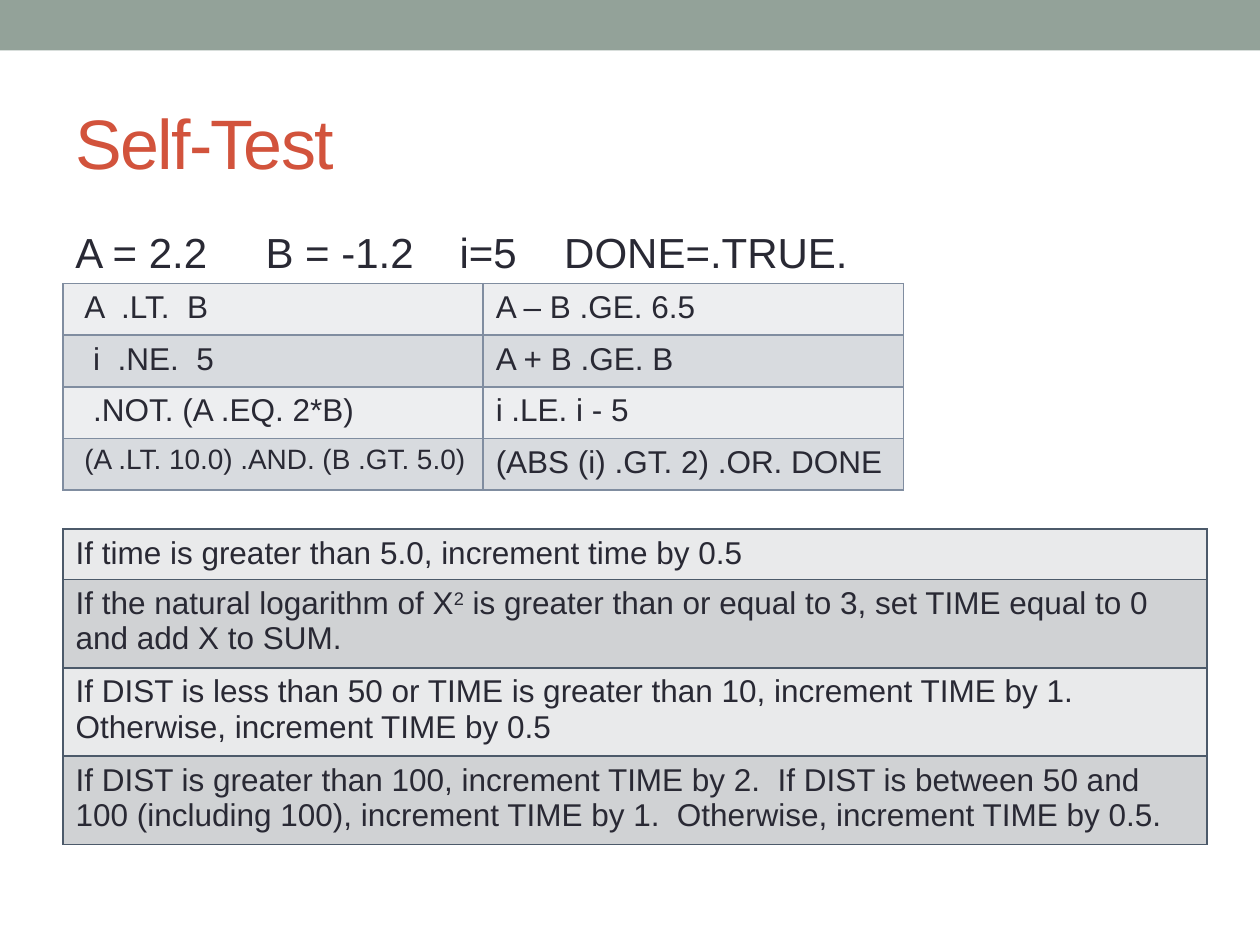
import pptx
import pptx.util
import pptx.dml.color
import pptx.enum.shapes
import pptx.enum.text
import pptx.oxml
import pptx.oxml.ns
from pptx.util import Inches, Pt

HUES = {
    "bar": "93A299", "title": "D2533C", "text": "292934",
    "test_line": "808DA0", "test_odd": "EDEEF0", "test_even": "D8DBDF",
    "task_line": "4C5A6A", "task_odd": "E9EAEB", "task_even": "D0D2D4",
}

# Each cell: text, size, left margin
TESTS = [
    [("A  .LT.  B", 18, 0.17), ("A – B .GE. 6.5", 18, 0.1)],
    [("i  .NE.  5", 18, 0.24), ("A + B .GE. B", 18, 0.1)],
    [(".NOT. (A .EQ. 2*B)", 18, 0.24), ("i .LE. i - 5", 18, 0.1)],
    [("(A .LT. 10.0) .AND. (B .GT. 5.0)", 16, 0.17),
     ("(ABS (i) .GT. 2) .OR. DONE", 18, 0.1)],
]
TASKS = [
    "If time is greater than 5.0, increment time by 0.5",
    "If the natural logarithm of X^2^ is greater than or equal to 3, "
    "set TIME equal to 0 and add X to SUM.",
    "If DIST is less than 50 or TIME is greater than 10, increment TIME by 1.  "
    "Otherwise, increment TIME by 0.5",
    "If DIST is greater than 100, increment TIME by 2.  If DIST is between 50 "
    "and 100 (including 100), increment TIME by 1.  Otherwise, increment TIME by 0.5.",
]


def tint(name):
    return pptx.dml.color.RGBColor.from_string(HUES[name])


def style(run, size, hue="text"):
    run.font.name = "Arial"
    run.font.size = Pt(size)
    run.font.color.rgb = tint(hue)


def add_bar(slide, x, y, w, h):
    bar = slide.shapes.add_shape(
        pptx.enum.shapes.MSO_SHAPE.RECTANGLE, x, y, w, h)
    bar.shadow.inherit = False
    bar.fill.solid()
    bar.fill.fore_color.rgb = tint("bar")
    bar.line.fill.background()


def set_title(slide, x, y, w, h):
    title = slide.shapes.title
    title.left, title.top, title.width, title.height = x, y, w, h
    frame = title.text_frame
    frame.text = "Self-Test"
    frame.vertical_anchor = pptx.enum.text.MSO_ANCHOR.MIDDLE
    para = frame.paragraphs[0]
    para.alignment = pptx.enum.text.PP_ALIGN.LEFT
    run = para.runs[0]
    style(run, 40, "title")
    run._r.get_or_add_rPr().set("spc", "-100")


def add_givens(slide, x, y, w, h):
    """Place the variable values, spaced by tab stops."""
    frame = slide.shapes.add_textbox(x, y, w, h).text_frame
    frame.word_wrap = True
    para = frame.paragraphs[0]
    para.text = "A = 2.2\tB = -1.2\ti=5\tDONE=.TRUE."
    para.space_before = Pt(2.4)
    stops = "".join(f'<a:tab pos="{Inches(pos)}" algn="l"/>'
                    for pos in (1.51, 3.05, 3.88))
    para._p.get_or_add_pPr().append(pptx.oxml.parse_xml(
        f'<a:tabLst {pptx.oxml.ns.nsdecls("a")}>{stops}</a:tabLst>'))
    for run in para.runs:
        style(run, 24)


def fill_cell(cell, text, size, left, kind, row):
    """Write a cell; text between carets is raised."""
    para = cell.text_frame.paragraphs[0]
    for i, part in enumerate(text.split("^")):
        run = para.add_run()
        run.text = part
        style(run, size)
        if i % 2:
            run._r.get_or_add_rPr().set("baseline", "30000")
    cell.margin_left = Inches(left)
    props = cell._tc.get_or_add_tcPr()
    for side in "LRTB":
        props.append(pptx.oxml.parse_xml(
            f'<a:ln{side} {pptx.oxml.ns.nsdecls("a")} w="{Pt(1)}"><a:solidFill>'
            f'<a:srgbClr val="{HUES[kind + "_line"]}"/></a:solidFill></a:ln{side}>'))
    cell.fill.solid()
    cell.fill.fore_color.rgb = tint(kind + ("_even" if row % 2 else "_odd"))


def add_grid(slide, x, y, w, rows, highs, kind):
    cols = len(rows[0])
    table = slide.shapes.add_table(
        len(rows), cols, x, y, w, Inches(sum(highs))).table
    table.first_row = table.horz_banding = False
    for r, (cells, high) in enumerate(zip(rows, highs)):
        table.rows[r].height = Inches(high)
        for c, (text, size, left) in enumerate(cells):
            fill_cell(table.cell(r, c), text, size, left, kind, r)


def main():
    deck = pptx.Presentation()
    deck.slide_width, deck.slide_height = Inches(10), Inches(7.5)
    slide = deck.slides.add_slide(deck.slide_layouts[5])
    edge, wide = Inches(0.5), Inches(9)
    add_bar(slide, 0, 0, deck.slide_width, Inches(0.4))
    set_title(slide, edge, Inches(0.58), wide, Inches(1.08))
    add_givens(slide, edge, Inches(1.75), wide, Inches(5.33))
    add_grid(slide, edge, Inches(2.25), Inches(6.67), TESTS,
             [0.41] * 4, "test")
    add_grid(slide, edge, Inches(4.2), Inches(9.08),
             [[(task, 18, 0.1)] for task in TASKS],
             [0.38] + [0.66] * 3, "task")
    deck.save("out.pptx")


if __name__ == "__main__":
    main()
